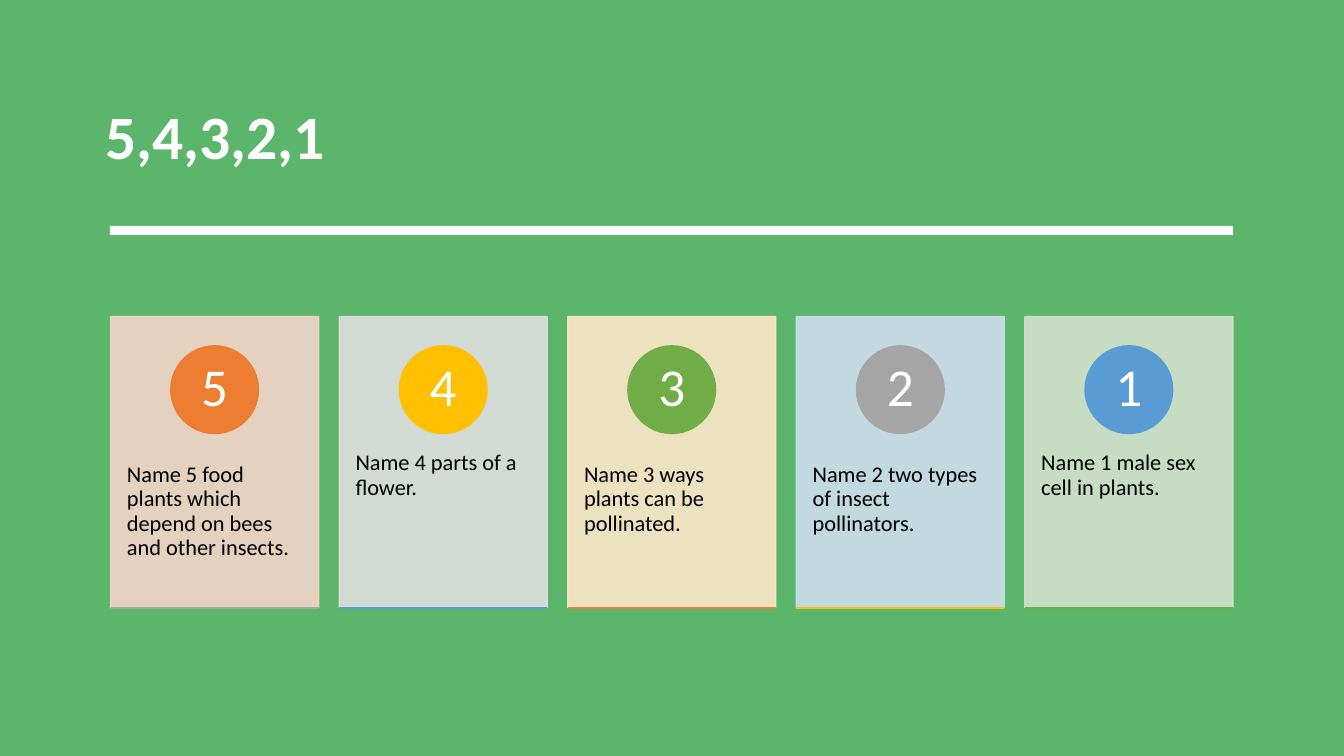
import pptx
import pptx.util
import pptx.dml.color
import pptx.enum.shapes
import pptx.enum.text
import pptx.oxml.ns
import lxml.etree

Cm = pptx.util.Cm
Pt = pptx.util.Pt
RGBColor = pptx.dml.color.RGBColor
SHAPE = pptx.enum.shapes.MSO_SHAPE
ALIGN = pptx.enum.text.PP_ALIGN
ANCHOR = pptx.enum.text.MSO_ANCHOR
qn = pptx.oxml.ns.qn

GREEN = RGBColor(0x5B, 0xB5, 0x6A)
WHITE = RGBColor(0xFF, 0xFF, 0xFF)
BLACK = RGBColor(0x00, 0x00, 0x00)
ORANGE = RGBColor(0xED, 0x7D, 0x31)
GOLD = RGBColor(0xFF, 0xC0, 0x00)
LEAF = RGBColor(0x70, 0xAD, 0x47)
GREY = RGBColor(0xA5, 0xA5, 0xA5)
BLUE = RGBColor(0x59, 0x9B, 0xD5)
PEACH = RGBColor(0xF7, 0xD5, 0xCB)
SILVER = RGBColor(0xE0, 0xE0, 0xE0)
CREAM = RGBColor(0xFF, 0xE8, 0xCA)
SKY = RGBColor(0xCF, 0xDE, 0xEF)
MINT = RGBColor(0xD4, 0xE2, 0xCE)

deck = pptx.Presentation()
deck.slide_width = Cm(33.87)
deck.slide_height = Cm(19.05)
slide = deck.slides.add_slide(deck.slide_layouts[6])
slide.background.fill.solid()
slide.background.fill.fore_color.rgb = GREEN


def add_text(words, left, top, width, height, size, color, pad, anchor):
    box = slide.shapes.add_textbox(Cm(left), Cm(top), Cm(width), Cm(height))
    frame = box.text_frame
    frame.word_wrap = True
    frame.vertical_anchor = anchor
    frame.margin_left = frame.margin_right = Cm(pad[0])
    frame.margin_top = frame.margin_bottom = Cm(pad[1])
    line = frame.paragraphs[0]
    line.text = words
    line.line_spacing = 0.9
    line.font.name = "Calibri"
    line.font.size = Pt(size)
    line.font.color.rgb = color
    return line


def add_block(kind, left, top, width, height, color):
    block = slide.shapes.add_shape(kind, Cm(left), Cm(top), Cm(width), Cm(height))
    block.shadow.inherit = False
    block.fill.solid()
    block.fill.fore_color.rgb = color
    block.line.color.rgb = color
    block.line.width = Pt(1)
    return block


title = add_text("5,4,3,2,1", 2.41, 1.68, 29.03, 3.68, 44, WHITE, (0.25, 0.13), ANCHOR.MIDDLE)
title.font.bold = True
rule = add_block(SHAPE.RECTANGLE, 2.77, 5.69, 28.3, 0.23, WHITE)
rule.line.fill.background()

cards = [
    ("5", "Name 5 food plants which depend on bees and other insects.", PEACH, ORANGE, GREY),
    ("4", "Name 4 parts of a flower.", SILVER, GOLD, BLUE),
    ("3", "Name 3 ways plants can be pollinated.", CREAM, LEAF, ORANGE),
    ("2", "Name 2 two types of insect pollinators.", SKY, GREY, GOLD),
    ("1", "Name 1 male sex cell in plants.", MINT, BLUE, LEAF),
]
LEFT, TOP, WIDTH, HEIGHT, STEP = 2.79, 7.98, 5.24, 7.33, 5.76
DISC, DIGIT = 2.21, 1.56
MID = 9.82

for place, (digit, task, tint, color, edge) in enumerate(cards):
    left = LEFT + place * STEP
    center = left + WIDTH / 2
    card = add_block(SHAPE.RECTANGLE, left, TOP, WIDTH, HEIGHT, tint)
    for shade in card.element.spPr.iter(qn("a:srgbClr")):
        lxml.etree.SubElement(shade, qn("a:alpha")).set("val", "89000")
    add_text(task, left, 10.77, WIDTH, 4.4, 16, BLACK, (0.41, 0.91), ANCHOR.TOP)
    add_block(SHAPE.OVAL, center - DISC / 2, MID - DISC / 2, DISC, DISC, color)
    label = add_text(digit, center - DIGIT / 2, MID - DIGIT / 2, DIGIT, DIGIT,
                     38, WHITE, (0.17, 0.03), ANCHOR.MIDDLE)
    label.alignment = ALIGN.CENTER
    base = slide.shapes.add_connector(
        pptx.enum.shapes.MSO_CONNECTOR.STRAIGHT,
        Cm(left), Cm(TOP + HEIGHT), Cm(left + WIDTH), Cm(TOP + HEIGHT))
    base.line.color.rgb = edge
    base.line.width = Pt(1.5)
    lxml.etree.SubElement(base.element.spPr, qn("a:effectLst"))

deck.save("out.pptx")
